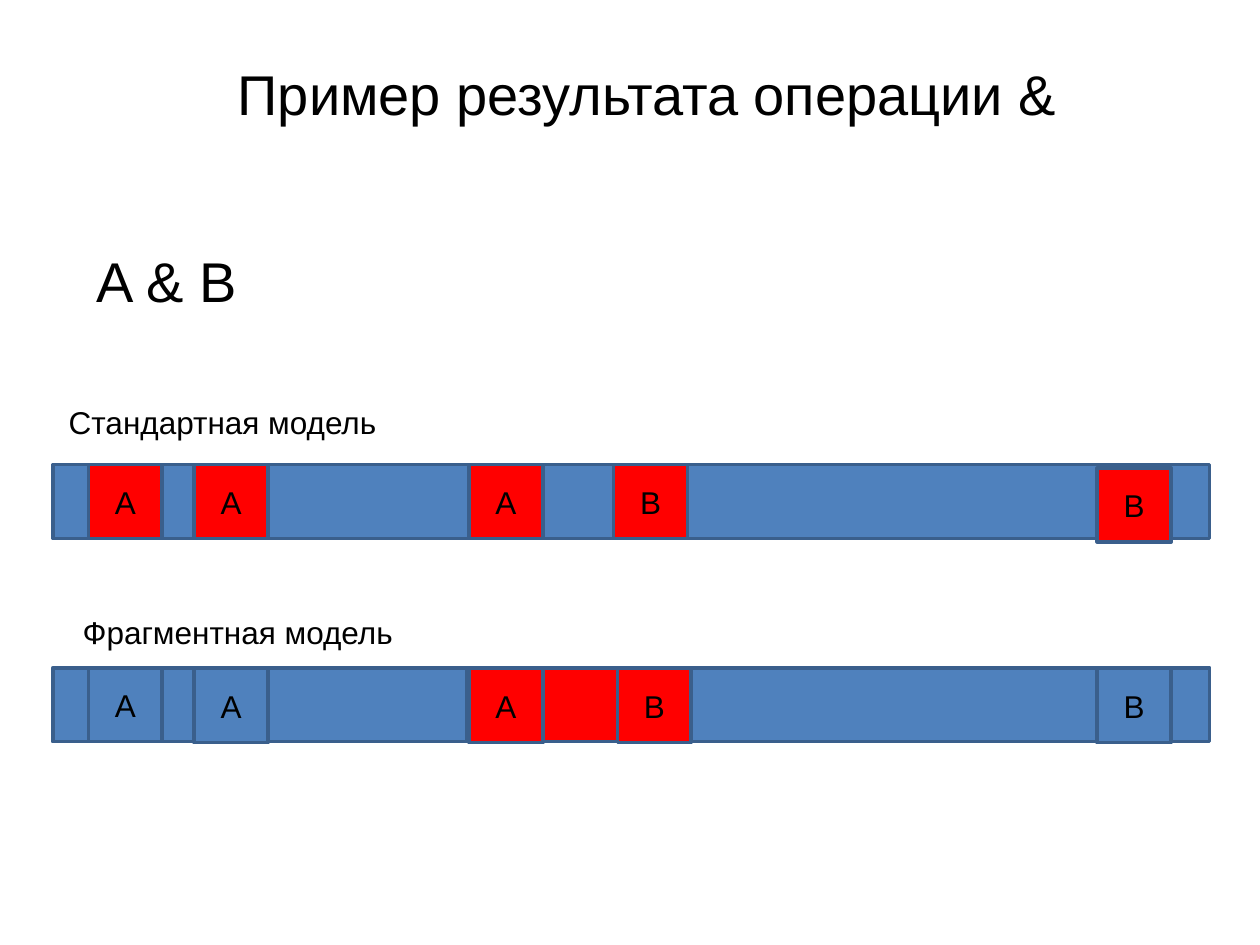
from pptx import Presentation
from pptx.dml.color import RGBColor
from pptx.enum.shapes import MSO_SHAPE
from pptx.enum.text import MSO_ANCHOR, PP_ALIGN
from pptx.util import Pt

RECT = MSO_SHAPE.RECTANGLE
TOP, MIDDLE = MSO_ANCHOR.TOP, MSO_ANCHOR.MIDDLE
LEFT, CENTER = PP_ALIGN.LEFT, PP_ALIGN.CENTER

BLACK = RGBColor(0x00, 0x00, 0x00)
BLUE = RGBColor(0x4F, 0x81, 0xBD)
EDGE = RGBColor(0x3A, 0x5F, 0x8C)
RED = RGBColor(0xFF, 0x00, 0x00)

SIDE = 42.2  # height of a bar and side of a cell


def write(shape, text, size=18, align=LEFT, anchor=TOP, wrap=True):
    frame = shape.text_frame
    frame.word_wrap = wrap
    frame.vertical_anchor = anchor
    par = frame.paragraphs[0]
    par.alignment = align
    run = par.add_run()
    run.text = text
    run.font.name = "Arial"
    run.font.size = Pt(size)
    run.font.color.rgb = BLACK


class Page:
    def __init__(self, slide, edge=EDGE, weight=2):
        self.slide = slide
        self.edge = edge
        self.weight = weight

    def label(self, text, x, y, w, h, **form):
        box = self.slide.shapes.add_textbox(Pt(x), Pt(y), Pt(w), Pt(h))
        write(box, text, **form)

    def bar(self, x, y, w, fill):
        shape = self.slide.shapes.add_shape(RECT, Pt(x), Pt(y), Pt(w), Pt(SIDE))
        shape.shadow.inherit = False
        shape.fill.solid()
        shape.fill.fore_color.rgb = fill
        shape.line.color.rgb = self.edge
        shape.line.width = Pt(self.weight)
        return shape

    def cell(self, text, x, y, fill):
        write(self.bar(x, y, SIDE, fill), text, align=CENTER, anchor=MIDDLE)


def main():
    deck = Presentation()
    deck.slide_width, deck.slide_height = Pt(720), Pt(540)
    page = Page(deck.slides.add_slide(deck.slide_layouts[6]))

    # Title and query
    page.label("Пример результата операции &", 36, 21.6, 668, 63.4,
               size=32, align=CENTER, anchor=MIDDLE)
    page.label("A & B", 48.2, 137.5, 97.2, 46, size=32, wrap=False)

    # Standard model: every match is marked
    top = 265.5
    page.label("Стандартная модель", 32.2, 226.8, 192.2, 29, wrap=False)
    page.bar(30.2, top, 661, BLUE)
    for text, x, drop in (("A", 50.5, 0), ("A", 111, 0), ("A", 268, 0),
                          ("B", 350.7, 0), ("B", 627, 2)):
        page.cell(text, x, top + drop, RED)

    # Fragment model: only the span from A to B is marked
    top = 381.6
    page.label("Фрагментная модель", 40.1, 347, 193.7, 29, wrap=False)
    page.bar(30.2, top, 661, BLUE)
    page.bar(266.6, top, 126.7, RED)
    for text, x, drop, fill in (("A", 50.5, 0, BLUE), ("A", 111, 0.5, BLUE),
                                ("A", 268, 0.5, RED), ("B", 352.8, 0.5, RED),
                                ("B", 627, 0.5, BLUE)):
        page.cell(text, x, top + drop, fill)

    deck.save("out.pptx")


if __name__ == "__main__":
    main()
